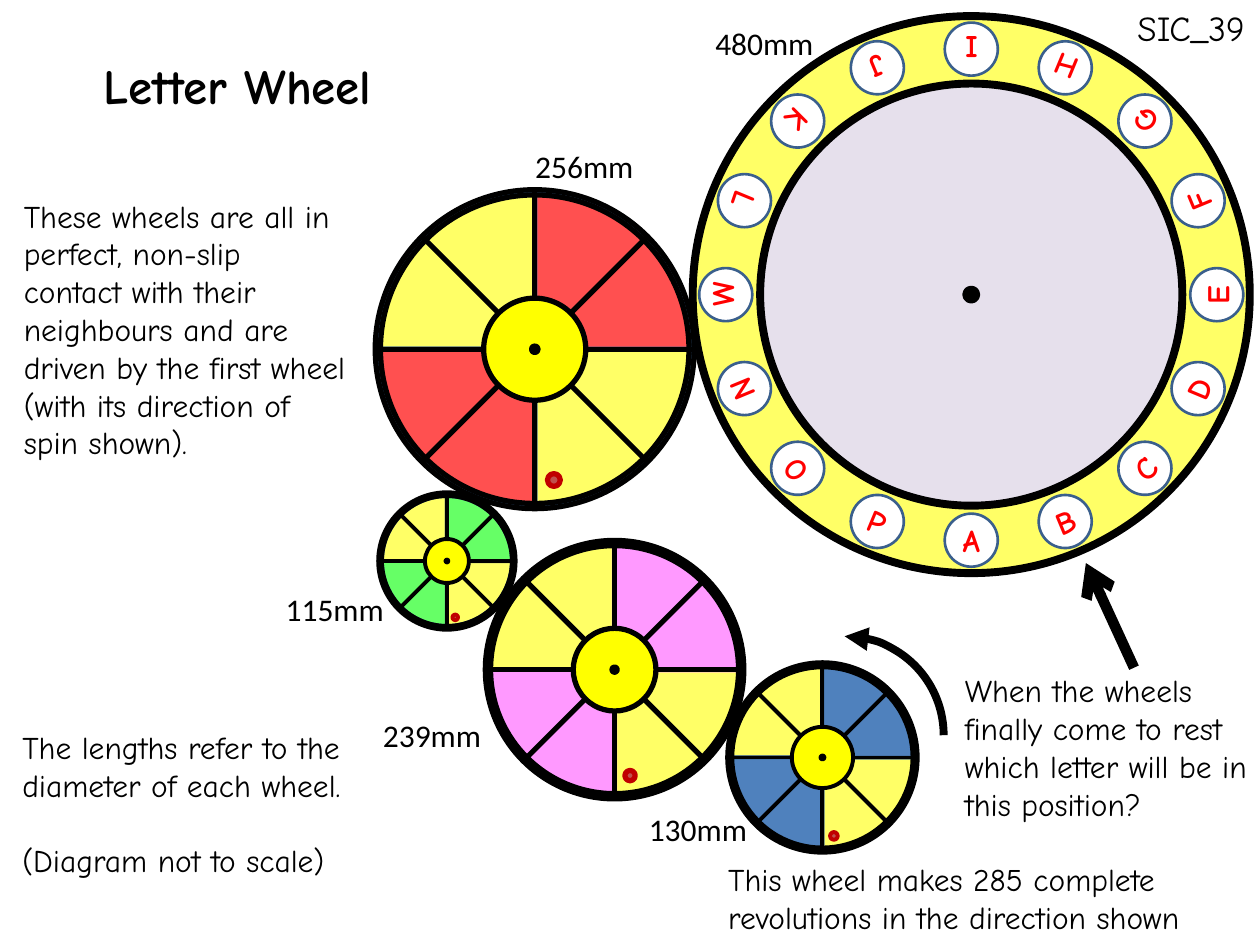
import math
from dataclasses import dataclass
from typing import NamedTuple, Optional

from lxml import etree
from pptx import Presentation
from pptx import util as u
from pptx.dml.color import RGBColor
from pptx.enum import shapes, text
from pptx.oxml import ns

BLACK = RGBColor(0x00, 0x00, 0x00)
WHITE = RGBColor(0xFF, 0xFF, 0xFF)
PALE_YELLOW = RGBColor(0xFF, 0xFF, 0x66)
YELLOW = RGBColor(0xFF, 0xFF, 0x00)
LILAC = RGBColor(0xE6, 0xE0, 0xEC)
OUTLINE_BLUE = RGBColor(0x3A, 0x5F, 0x8C)
LETTER_RED = RGBColor(0xFF, 0x00, 0x00)
SALMON = RGBColor(0xFF, 0x50, 0x50)
GREEN = RGBColor(0x66, 0xFF, 0x66)
PINK = RGBColor(0xFF, 0x99, 0xFF)
BLUE = RGBColor(0x4F, 0x81, 0xBD)
DOT_FILL = RGBColor(0xC0, 0x50, 0x4D)
DOT_LINE = RGBColor(0xC0, 0x00, 0x00)

HAND_FONT = "Comic Neue"
PLAIN_FONT = "Calibri"


class Ring(NamedTuple):
    diameter: float
    weight: float
    color: RGBColor = BLACK


@dataclass
class Wheel:
    x: float
    y: float
    sector_diameter: float
    spoke_length: float
    weight: float
    accent: RGBColor
    rings: tuple[Ring, ...]
    blue_outline: bool = True


@dataclass
class Caption:
    paragraphs: tuple[str, ...]
    left: float
    top: float
    width: float
    height: float
    font: str = HAND_FONT
    size: float = 18
    wrap: bool = True


DRIVEN_WHEELS = (
    Wheel(12.39, 13.5, 4.9, 5.21, 3, PINK,
          (Ring(5.21, 3), Ring(5.05, 3), Ring(5, 3)), blue_outline=False),
    Wheel(9.01, 11.31, 2.62, 2.77, 2.25, GREEN,
          tuple(Ring(d, 2.25) for d in (2.77, 2.69, 2.67, 2.62))),
    Wheel(10.78, 7.04, 6.35, 6.43, 3, SALMON, (Ring(6.43, 3), Ring(6.22, 3))),
)
FIRST_WHEEL = Wheel(16.58, 15.27, 3.68, 3.81, 2.25, BLUE,
                    (Ring(3.86, 0.75, WHITE), Ring(3.81, 2.25),
                     Ring(3.76, 4.5), Ring(3.66, 3)))

DIAMETERS = (("130mm", 12.83, 16.21), ("239mm", 7.47, 14.3), ("115mm", 5.51, 11.76),
             ("256mm", 10.54, 2.84), ("480mm", 14.17, 0.36))

CAPTIONS = (
    Caption(("This wheel makes 285 complete revolutions in the direction shown",),
            14.43, 17.22, 10.57, 1.8),
    *(Caption((label,), left, top, 2.51, 1.02, PLAIN_FONT, wrap=False)
      for label, left, top in DIAMETERS),
    Caption(("When the wheels finally come to rest which letter will be in this position?",),
            19.2, 13.41, 6.78, 3.33),
    Caption(("These wheels are all in perfect, non-slip contact with their neighbours "
             "and are driven by the first wheel (with its direction of spin shown).",),
            0.23, 3.84, 6.99, 6.4),
    Caption(("The lengths refer to the diameter of each wheel.", "(Diagram not to scale)"),
            0.2, 14.55, 7.62, 4.11),
    Caption(("SIC_39",), 22.68, 0, 2.72, 1.12, size=20, wrap=False),
)


def format_runs(frame, font: str, size: float, color: RGBColor = BLACK,
                bold: bool = False) -> None:
    for paragraph in frame.paragraphs:
        for run in paragraph.runs:
            run.font.name = font
            run.font.size = u.Pt(size)
            run.font.bold = bold
            run.font.color.rgb = color


def add_round(slide, kind, x: float, y: float, diameter: float,
              fill: Optional[RGBColor], line: Optional[RGBColor], weight: float = 0):
    shape = slide.shapes.add_shape(kind, u.Cm(x - diameter / 2), u.Cm(y - diameter / 2),
                                   u.Cm(diameter), u.Cm(diameter))
    shape.shadow.inherit = False
    if fill is None:
        shape.fill.background()
    else:
        shape.fill.solid()
        shape.fill.fore_color.rgb = fill
    if line is None:
        shape.line.fill.background()
    else:
        shape.line.color.rgb = line
        shape.line.width = u.Pt(weight)
    return shape


def add_disc(slide, x: float, y: float, diameter: float, fill: Optional[RGBColor],
             line: RGBColor, weight: float):
    return add_round(slide, shapes.MSO_SHAPE.OVAL, x, y, diameter, fill, line, weight)


def add_line(slide, x1: float, y1: float, x2: float, y2: float, weight: float):
    connector = slide.shapes.add_connector(shapes.MSO_CONNECTOR.STRAIGHT,
                                           u.Cm(x1), u.Cm(y1), u.Cm(x2), u.Cm(y2))
    connector.line.color.rgb = BLACK
    connector.line.width = u.Pt(weight)
    etree.SubElement(connector._element.spPr, ns.qn("a:effectLst"))
    return connector


def add_arrowhead(shape, kind: str) -> None:
    etree.SubElement(shape.line._get_or_add_ln(), ns.qn("a:tailEnd"), type=kind)


def add_wheel(slide, wheel: Wheel) -> None:
    x, y, weight = wheel.x, wheel.y, wheel.weight
    for start, fill in ((0, PALE_YELLOW), (90, wheel.accent)):
        for rotation in (0, 180):
            outline = OUTLINE_BLUE if wheel.blue_outline else fill
            sector = add_round(slide, shapes.MSO_SHAPE.PIE, x, y, wheel.sector_diameter,
                               fill, outline, weight)
            sector.adjustments[0] = start * 0.6
            sector.adjustments[1] = (start + 90) * 0.6
            sector.rotation = rotation
    for degrees in (90, 0, 45, 135):
        dx = wheel.spoke_length / 2 * math.cos(math.radians(degrees))
        dy = wheel.spoke_length / 2 * math.sin(math.radians(degrees))
        add_line(slide, x - dx, y - dy, x + dx, y + dy, weight)
    outer = wheel.rings[0].diameter
    add_disc(slide, x, y, outer * 0.32, YELLOW, BLACK, weight)
    for ring in wheel.rings:
        add_disc(slide, x, y, ring.diameter, None, ring.color, ring.weight)
    add_disc(slide, x, y, outer * 0.02, BLACK, BLACK, weight)
    add_disc(slide, x + outer * 0.06, y + outer * 0.41, outer * 0.04,
             DOT_FILL, DOT_LINE, weight)


def add_letter_wheel(slide, x: float, y: float, letters: str) -> None:
    for diameter, fill in ((11.23, PALE_YELLOW), (8.51, LILAC), (0.2, BLACK)):
        add_disc(slide, x, y, diameter, fill, BLACK, 4.5)
    step = 360 / len(letters)
    for index, letter in enumerate(letters):
        angle = math.radians(index * step)
        token = add_disc(slide, x + 4.95 * math.sin(angle), y + 4.95 * math.cos(angle),
                         1.07, WHITE, OUTLINE_BLUE, 1.5)
        token.rotation = -index * step % 360
        frame = token.text_frame
        frame.margin_left = frame.margin_right = frame.margin_top = frame.margin_bottom = 0
        frame.word_wrap = False
        frame.vertical_anchor = text.MSO_ANCHOR.MIDDLE
        frame.text = letter
        frame.paragraphs[0].alignment = text.PP_ALIGN.CENTER
        format_runs(frame, HAND_FONT, 18, LETTER_RED, bold=True)


def add_caption(slide, caption: Caption) -> None:
    box = slide.shapes.add_textbox(u.Cm(caption.left), u.Cm(caption.top),
                                   u.Cm(caption.width), u.Cm(caption.height))
    frame = box.text_frame
    frame.word_wrap = caption.wrap
    frame.text = "\n".join(caption.paragraphs)
    for paragraph in frame.paragraphs[1:]:
        paragraph.space_before = u.Pt(21.6)
    format_runs(frame, caption.font, caption.size)


def set_title(slide, title: str) -> None:
    shape = slide.shapes.title
    shape.left, shape.top, shape.width, shape.height = (
        u.Cm(1.83), u.Cm(0.99), u.Cm(7.04), u.Cm(1.45))
    frame = shape.text_frame
    frame.text = title
    frame.word_wrap = False
    frame.auto_size = text.MSO_AUTO_SIZE.NONE
    frame.vertical_anchor = text.MSO_ANCHOR.TOP
    frame.paragraphs[0].alignment = text.PP_ALIGN.LEFT
    format_runs(frame, HAND_FONT, 28, bold=True)


def main() -> None:
    presentation = Presentation()
    presentation.slide_width, presentation.slide_height = u.Cm(25.4), u.Cm(19.05)
    slide = presentation.slides.add_slide(presentation.slide_layouts[5])
    set_title(slide, "Letter Wheel")
    add_letter_wheel(slide, 19.58, 5.94, "ABCDEFGHIJKLMNOP")
    spin = add_round(slide, shapes.MSO_SHAPE.ARC, 17.03, 14.82, 3.99, None, BLACK, 4.5)
    spin.rotation = 90
    spin._element.spPr.find(ns.qn("a:xfrm")).set("flipH", "1")
    add_arrowhead(spin, "triangle")
    for wheel in DRIVEN_WHEELS:
        add_wheel(slide, wheel)
    add_arrowhead(add_line(slide, 22.86, 13.46, 21.89, 11.35, 6), "arrow")
    add_wheel(slide, FIRST_WHEEL)
    for caption in CAPTIONS:
        add_caption(slide, caption)
    presentation.save("out.pptx")


if __name__ == "__main__":
    main()
